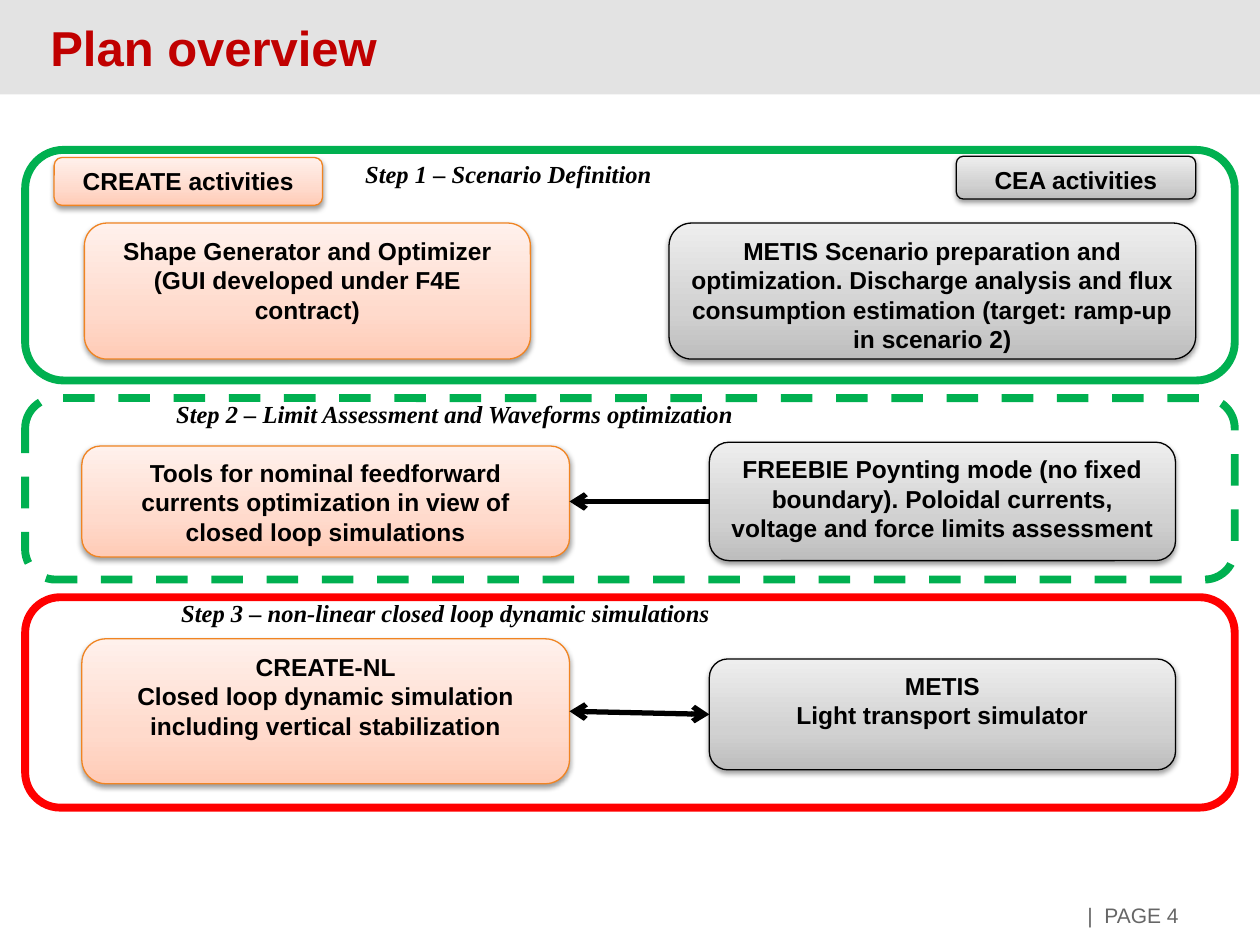
from copy import deepcopy
from lxml.etree import SubElement as Sub
from pptx import Presentation
from pptx.dml.color import RGBColor as Rgb
from pptx.enum.dml import MSO_LINE as Dash
from pptx.enum.shapes import MSO_CONNECTOR as Link, MSO_SHAPE as Form
from pptx.enum.text import MSO_ANCHOR as Anchor, MSO_AUTO_SIZE as Fit, PP_ALIGN as Align
from pptx.oxml.ns import qn
from pptx.util import Inches, Pt

INK = {"black": "000000", "band": "E3E3E3", "title": "C00000", "page": "666666",
       "green": "00B050", "red": "FF0000", "orange": "F08422"}
FADE = {"orange": ("FFCBB6", "FFDACC", "FFF1EC"),
        "black": ("BDBDBD", "D1D1D1", "EEEEEE")}
STOPS = (0, 0.35, 1)


def ink(name):
    return Rgb.from_string(INK[name])


def place(shape, spot):
    shape.left, shape.top, shape.width, shape.height = map(Inches, spot)


def write(par, text, size, color, face="Arial", bold=True, slant=False):
    run = par.add_run()
    run.text = text
    font = run.font
    font.name, font.size, font.bold, font.italic = face, Pt(size), bold, slant
    font.color.rgb = ink(color)


def trim(frame):
    frame.margin_left = frame.margin_right = 0
    frame.margin_top = frame.margin_bottom = 0
    frame.vertical_anchor = Anchor.MIDDLE
    frame.auto_size = Fit.NONE


def add_band(slide):
    band = slide.shapes.add_shape(Form.RECTANGLE, 0, 0, Inches(10), Inches(0.75))
    band.fill.solid()
    band.fill.fore_color.rgb = ink("band")
    band.line.fill.background()
    band.shadow.inherit = False


def add_title(slide, text):
    title = slide.shapes.title
    place(title, (0.4, 0.08, 7.36, 0.59))
    trim(title.text_frame)
    par = title.text_frame.paragraphs[0]
    par.alignment = Align.LEFT
    write(par, text, 28, "title")
    tree = title.element.getparent()
    tree.append(title.element)


def add_page(slide, text):
    box = slide.shapes.add_textbox(*map(Inches, (8.63, 7.06, 1.31, 0.4)))
    trim(box.text_frame)
    write(box.text_frame.paragraphs[0], text, 12, "page", bold=False)


def add_frame(slide, top, height, color, dash=None):
    frame = slide.shapes.add_shape(Form.ROUNDED_RECTANGLE,
                                   *map(Inches, (0.2, top, 9.6, height)))
    frame.fill.background()
    frame.line.color.rgb = ink(color)
    frame.line.width = Pt(4.5)
    frame.line.dash_style = dash
    frame.shadow.inherit = False


def shade(shape, tones):
    fill = shape.fill
    fill.gradient()
    fill.gradient_angle = 90
    stops = shape.element.spPr.find(".//" + qn("a:gsLst"))
    stops.append(deepcopy(stops[0]))
    for stop, spot, tone in zip(fill.gradient_stops, STOPS, tones):
        stop.position = spot
        stop.color.rgb = Rgb.from_string(tone)


def cast(shape):
    shape.shadow.inherit = False
    drop = Sub(shape.element.spPr.find(qn("a:effectLst")), qn("a:outerShdw"),
               blurRad=str(Pt(3.1)), dist=str(Pt(1.6)), dir="5400000", rotWithShape="0")
    tone = Sub(drop, qn("a:srgbClr"), val=INK["black"])
    Sub(tone, qn("a:alpha"), val="38000")


def add_card(slide, spot, color, *lines):
    card = slide.shapes.add_shape(Form.ROUNDED_RECTANGLE, *map(Inches, spot))
    shade(card, FADE[color])
    card.line.color.rgb = ink(color)
    card.line.width = Pt(0.75)
    cast(card)
    frame = card.text_frame
    frame.word_wrap = True
    frame.vertical_anchor = Anchor.TOP
    for i, line in enumerate(lines):
        par = frame.add_paragraph() if i else frame.paragraphs[0]
        par.alignment = Align.CENTER
        write(par, line, 14, "black")
    return card


def add_step(slide, left, top, width, text):
    box = slide.shapes.add_textbox(*map(Inches, (left, top, width, 0.34)))
    box.text_frame.word_wrap = False
    box.text_frame.auto_size = Fit.SHAPE_TO_FIT_TEXT
    write(box.text_frame.paragraphs[0], text, 14, "black", "Times New Roman", slant=True)


def add_arrow(slide, right, left, *ends):
    arrow = slide.shapes.add_connector(Link.STRAIGHT, 0, 0, 0, 0)
    arrow.begin_connect(right, 1)
    arrow.end_connect(left, 3)
    arrow.line.color.rgb = ink("black")
    arrow.line.width = Pt(3)
    for end in ends:
        Sub(arrow.line._get_or_add_ln(), qn(end), type="arrow")
    Sub(arrow.element.spPr, qn("a:effectLst"))


def main():
    deck = Presentation()
    deck.slide_width, deck.slide_height = Inches(10), Inches(7.5)
    slide = deck.slides.add_slide(deck.slide_layouts[5])
    add_band(slide)
    add_title(slide, "Plan overview")
    add_page(slide, "|  PAGE 4")

    add_frame(slide, 1.19, 1.83, "green")
    add_frame(slide, 3.16, 1.44, "green", Dash.DASH)
    add_frame(slide, 4.74, 1.67, "red")
    add_step(slide, 2.8, 1.21, 2.49, "Step 1 – Scenario Definition")
    add_step(slide, 1.3, 3.12, 4.66, "Step 2 – Limit Assessment and Waveforms optimization")
    add_step(slide, 1.34, 4.7, 4.43, "Step 3 – non-linear closed loop dynamic simulations")

    add_card(slide, (0.43, 1.25, 2.13, 0.38), "orange", "CREATE activities")
    add_card(slide, (7.59, 1.24, 1.9, 0.34), "black", "CEA activities")
    add_card(slide, (0.67, 1.77, 3.54, 1.08), "orange",
             "Shape Generator and Optimizer (GUI developed under F4E contract)")
    add_card(slide, (5.31, 1.77, 4.18, 1.08), "black",
             "METIS Scenario preparation and optimization. Discharge analysis and flux "
             "consumption estimation (target: ramp-up in scenario 2)")
    tools = add_card(slide, (0.65, 3.54, 3.87, 0.88), "orange",
                     "Tools for nominal feedforward currents optimization in view of "
                     "closed loop simulations")
    limits = add_card(slide, (5.63, 3.51, 3.7, 0.94), "black",
                      "FREEBIE Poynting mode (no fixed boundary). Poloidal currents, "
                      "voltage and force limits assessment")
    loop = add_card(slide, (0.65, 5.07, 3.87, 1.15), "orange", "CREATE-NL",
                    "Closed loop dynamic simulation including vertical stabilization")
    light = add_card(slide, (5.63, 5.23, 3.7, 0.88), "black", "METIS",
                     "Light transport simulator")
    add_arrow(slide, limits, tools, "a:tailEnd")
    add_arrow(slide, light, loop, "a:headEnd", "a:tailEnd")
    deck.save("out.pptx")


if __name__ == "__main__":
    main()
